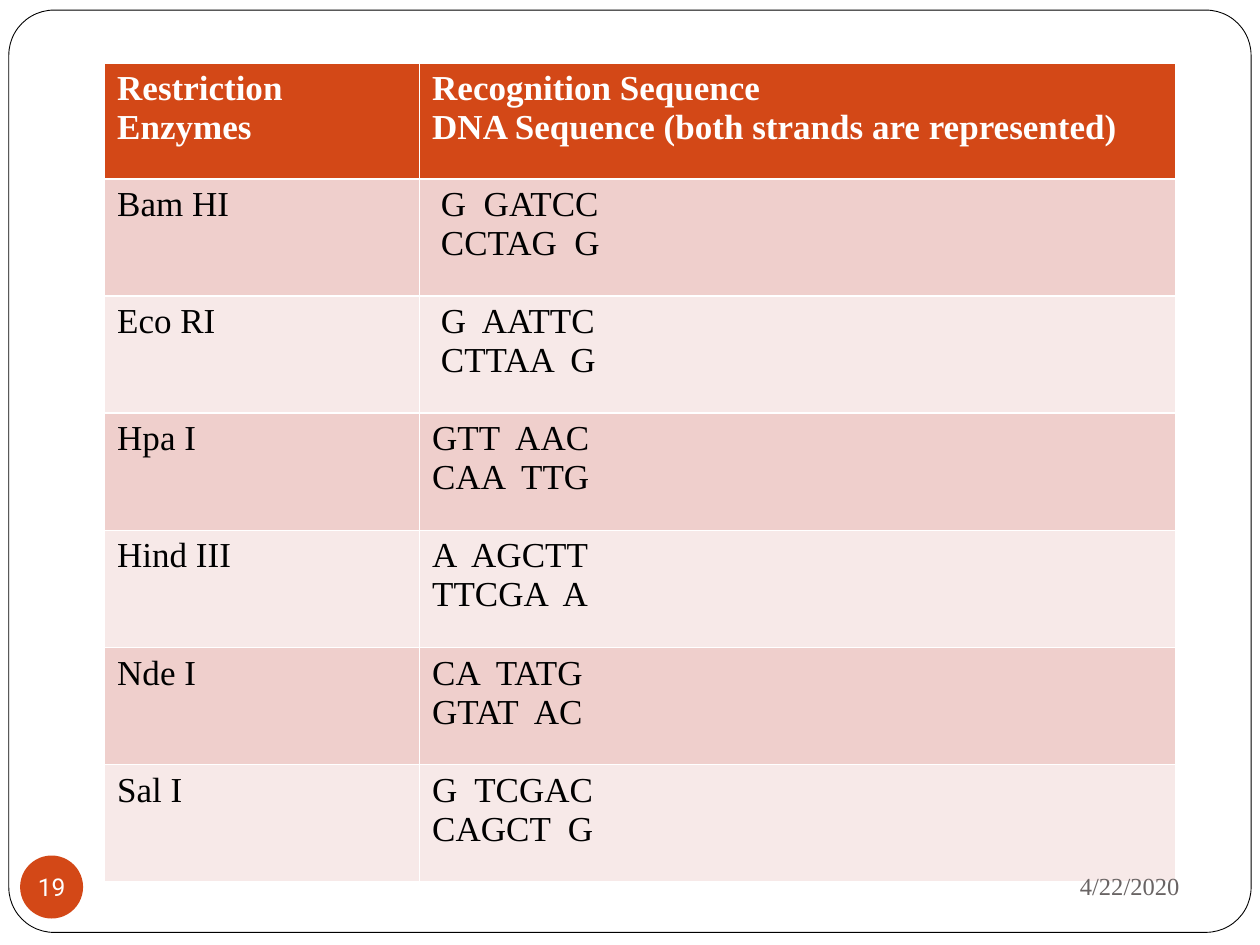
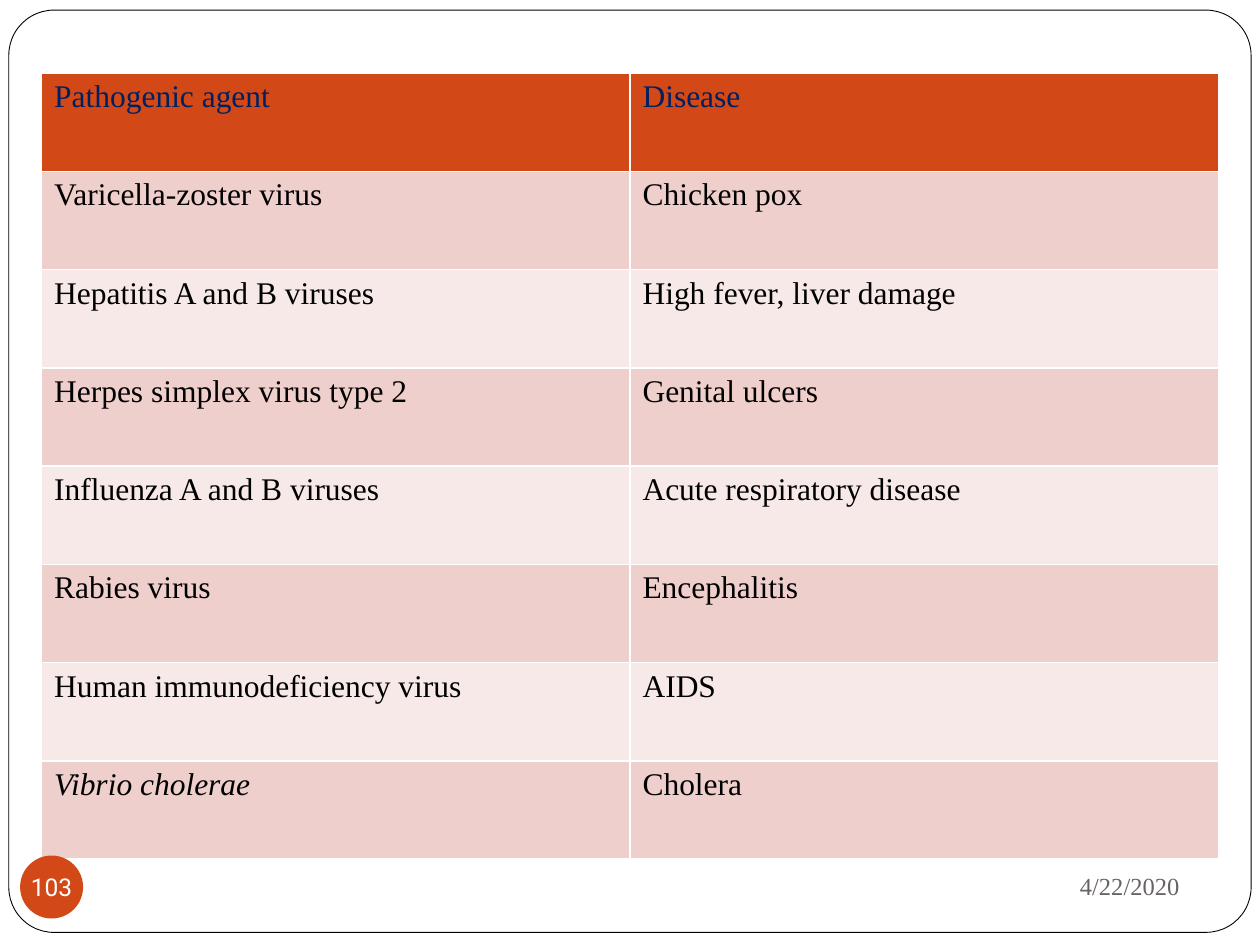
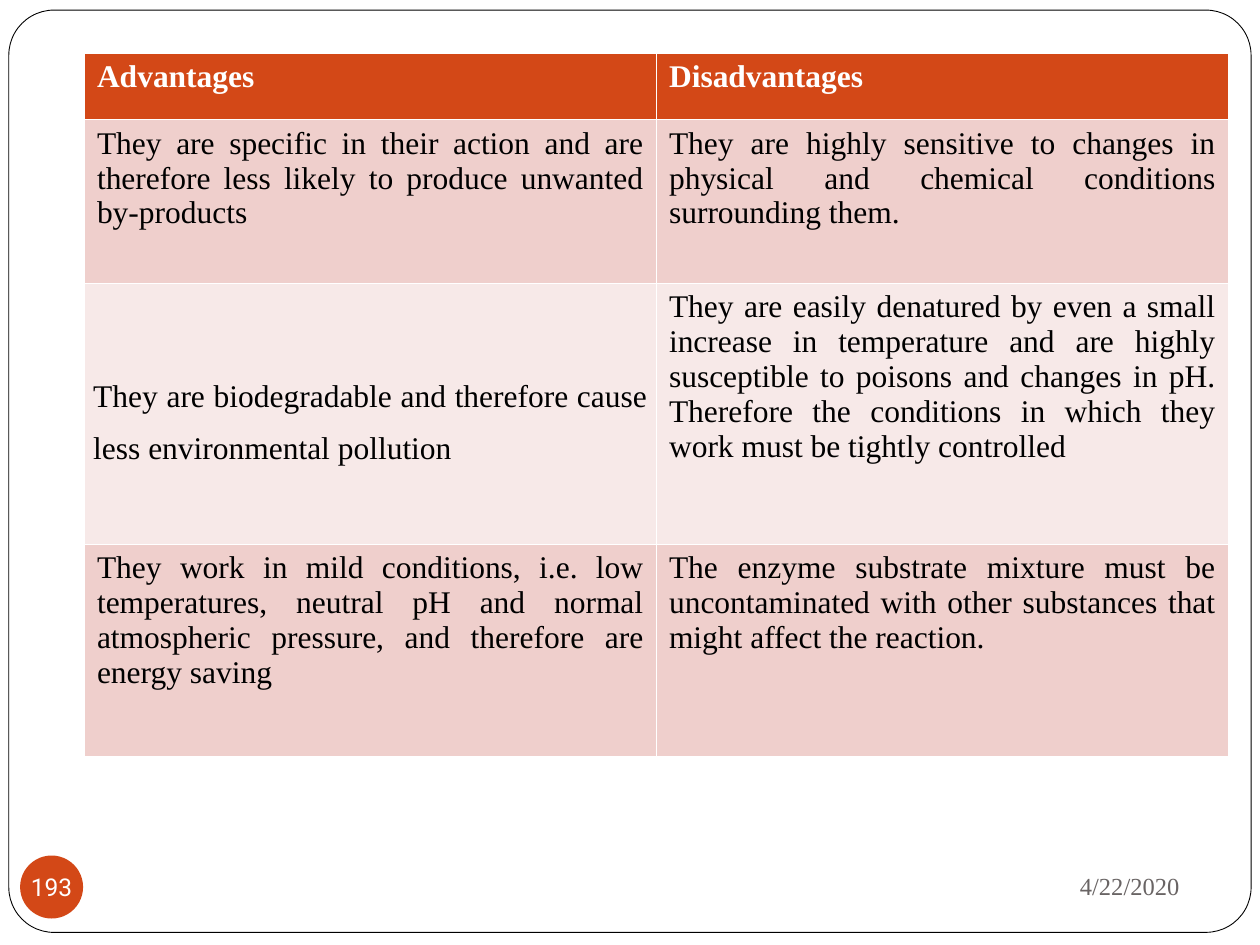
import pptx
import pptx.util
import pptx.dml.color
import pptx.enum.shapes
import pptx.enum.text

Inches = pptx.util.Inches
Pt = pptx.util.Pt
RGBColor = pptx.dml.color.RGBColor
MSO_SHAPE = pptx.enum.shapes.MSO_SHAPE
PP_ALIGN = pptx.enum.text.PP_ALIGN
MSO_ANCHOR = pptx.enum.text.MSO_ANCHOR

ORANGE = RGBColor(0xD3, 0x48, 0x17)
ROSE = RGBColor(0xEF, 0xCF, 0xCC)
PALE_ROSE = RGBColor(0xF7, 0xE9, 0xE8)
WHITE = RGBColor(0xFF, 0xFF, 0xFF)
BLACK = RGBColor(0, 0, 0)
NAVY = RGBColor(0x00, 0x20, 0x60)
GRAY = RGBColor(0x69, 0x64, 0x64)
SERIF = "Times New Roman"
SANS = "Roboto"

ENZYMES = [
    ("Restriction Enzymes",
     "Recognition Sequence\nDNA Sequence (both strands are represented)"),
    ("Bam HI", " G  GATCC\n CCTAG  G"),
    ("Eco RI", " G  AATTC\n CTTAA  G"),
    ("Hpa I", "GTT  AAC\nCAA  TTG"),
    ("Hind III", "A  AGCTT\nTTCGA  A"),
    ("Nde I", "CA  TATG\nGTAT  AC"),
    ("Sal I", "G  TCGAC\nCAGCT  G"),
]
DISEASES = [
    ("Pathogenic agent", "Disease"),
    ("Varicella-zoster virus", "Chicken pox"),
    ("Hepatitis A and B viruses", "High fever, liver damage"),
    ("Herpes simplex virus type 2", "Genital ulcers"),
    ("Influenza A and B viruses", "Acute respiratory disease"),
    ("Rabies virus", "Encephalitis"),
    ("Human immunodeficiency virus", "AIDS"),
    ("Vibrio cholerae", "Cholera"),
]
ENZYME_USE = [
    ("Advantages", "Disadvantages"),
    ("They are specific in their action and are therefore less likely to "
     "produce unwanted by-products",
     "They are highly sensitive to changes in physical and chemical "
     "conditions surrounding them."),
    ("They are biodegradable and therefore cause less environmental pollution",
     "They are easily denatured by even a small increase in temperature and "
     "are highly susceptible to poisons and changes in pH. Therefore the "
     "conditions in which they work must be tightly controlled"),
    ("They work in mild conditions, i.e. low temperatures, neutral pH and "
     "normal atmospheric pressure, and therefore are energy saving",
     "The enzyme substrate mixture must be uncontaminated with other "
     "substances that might affect the reaction."),
]


def format_text(tf, size, font, color, bold=False, align=None):
    for p in tf.paragraphs:
        p.alignment = align
        for r in p.runs:
            r.font.size = Pt(size)
            r.font.name = font
            r.font.bold = bold
            r.font.color.rgb = color


def add_plain_shape(slide, kind, box, fill):
    sp = slide.shapes.add_shape(kind, *map(Inches, box))
    sp.shadow.inherit = False
    sp.fill.solid()
    sp.fill.fore_color.rgb = fill
    sp.line.fill.background()
    return sp


def add_frame(slide):
    sp = add_plain_shape(slide, MSO_SHAPE.ROUNDED_RECTANGLE,
                         (0.07, 0.08, 9.86, 7.32), WHITE)
    sp.adjustments[0] = 0.049
    sp.line.color.rgb = BLACK
    sp.line.width = Pt(0.5)


def add_footer(slide, number):
    date = slide.shapes.add_textbox(*map(Inches, (6.75, 6.77, 2.71, 0.52)))
    tf = date.text_frame
    tf.word_wrap = True
    tf.vertical_anchor = MSO_ANCHOR.MIDDLE
    tf.text = "4/22/2020"
    format_text(tf, 14, SERIF, GRAY, align=PP_ALIGN.RIGHT)

    badge = add_plain_shape(slide, MSO_SHAPE.OVAL,
                            (0.16, 6.79, 0.5, 0.5), ORANGE)
    tf = badge.text_frame
    tf.margin_left = tf.margin_right = tf.margin_top = tf.margin_bottom = 0
    tf.word_wrap = False
    tf.vertical_anchor = MSO_ANCHOR.MIDDLE
    tf.text = str(number)
    format_text(tf, 14, SANS, WHITE, align=PP_ALIGN.CENTER)


def add_banded_table(slide, left, top, widths, heights, rows, size,
                     head_color=WHITE, head_bold=True, body_align=None):
    shape = slide.shapes.add_table(
        len(rows), len(widths), Inches(left), Inches(top),
        Inches(sum(widths)), Inches(sum(heights)))
    table = shape.table
    for column, width in zip(table.columns, widths):
        column.width = Inches(width)
    for i, (height, texts) in enumerate(zip(heights, rows)):
        table.rows[i].height = Inches(height)
        for cell, text in zip(table.rows[i].cells, texts):
            cell.text_frame.text = text
            cell.fill.solid()
            if i == 0:
                cell.fill.fore_color.rgb = ORANGE
                format_text(cell.text_frame, size, SERIF, head_color, head_bold)
            else:
                cell.fill.fore_color.rgb = ROSE if i % 2 else PALE_ROSE
                format_text(cell.text_frame, size, SERIF, BLACK,
                            align=body_align)
    return table


def new_slide(prs):
    slide = prs.slides.add_slide(prs.slide_layouts[6])
    add_frame(slide)
    return slide


def build_enzymes(prs):
    slide = new_slide(prs)
    add_banded_table(slide, 0.83, 0.5, [2.5, 6], [0.92] + [0.93] * 6,
                     ENZYMES, 20)
    add_footer(slide, 19)


def build_diseases(prs):
    slide = new_slide(prs)
    table = add_banded_table(slide, 0.33, 0.58, [4.67] * 2, [0.78] * 8,
                             DISEASES, 18, NAVY, False)
    species = table.cell(len(DISEASES) - 1, 0)
    species.text_frame.paragraphs[0].runs[0].font.italic = True
    add_footer(slide, 103)


def build_enzyme_use(prs):
    slide = new_slide(prs)
    add_footer(slide, 193)
    table = add_banded_table(slide, 0.67, 0.42, [4.54] * 2,
                             [0.53, 1.3, 2.07, 1.69], ENZYME_USE, 18,
                             body_align=PP_ALIGN.JUSTIFY)
    pollution = table.cell(2, 0)
    pollution.vertical_anchor = MSO_ANCHOR.MIDDLE
    pollution.margin_left = pollution.margin_right = Inches(0.07)
    pollution.margin_top = pollution.margin_bottom = 0
    pollution.text_frame.paragraphs[0].line_spacing = 1.5


def main():
    prs = pptx.Presentation()
    prs.slide_width = Inches(10)
    prs.slide_height = Inches(7.5)
    build_enzymes(prs)
    build_diseases(prs)
    build_enzyme_use(prs)
    prs.save("out.pptx")


if __name__ == "__main__":
    main()
